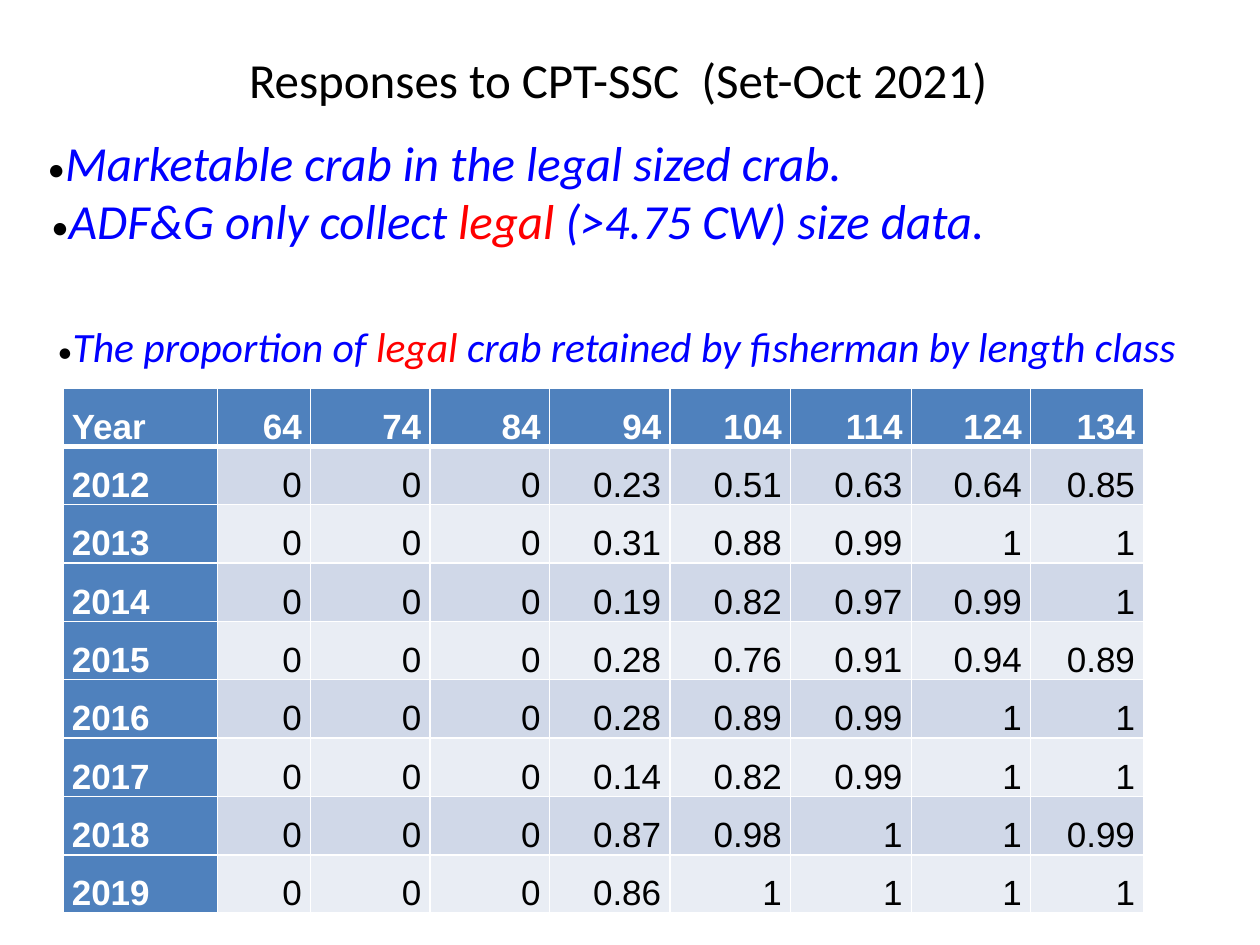
from lxml import etree
from pptx import Presentation
from pptx.dml.color import RGBColor
from pptx.enum.text import MSO_ANCHOR, PP_ALIGN
from pptx.oxml.ns import qn
from pptx.util import Inches, Pt

LEFT, CENTER, RIGHT = PP_ALIGN.LEFT, PP_ALIGN.CENTER, PP_ALIGN.RIGHT
TOP, MIDDLE, BOTTOM = MSO_ANCHOR.TOP, MSO_ANCHOR.MIDDLE, MSO_ANCHOR.BOTTOM

BLACK = RGBColor(0x00, 0x00, 0x00)
WHITE = RGBColor(0xFF, 0xFF, 0xFF)
BLUE = RGBColor(0x00, 0x00, 0xFF)
RED = RGBColor(0xFF, 0x00, 0x00)
HEADER = RGBColor(0x4F, 0x81, 0xBD)
BANDS = (RGBColor(0xD0, 0xD8, 0xE8), RGBColor(0xE9, 0xED, 0xF4))

BULLETS = [
    ((0.28, 1, 9.14, 0.58), 28, 20,
     [("Marketable crab in the legal sized crab.", BLUE)]),
    ((0.31, 1.46, 9.14, 0.58), 28, 20,
     [("ADF&G only collect ", BLUE), ("legal ", RED),
      ("(>4.75 CW) size data.", BLUE)]),
    ((0.36, 2.5, 9.47, 0.58), 23.8, 17,
     [("The proportion of ", BLUE), ("legal", RED),
      (" crab retained by fisherman by length class", BLUE)]),
]
COL_WIDTHS = (1.23, 0.74, 0.95, 0.95, 0.96, 0.96, 0.96, 0.95, 0.9)
ROWS = [
    ("Year", 64, 74, 84, 94, 104, 114, 124, 134),
    (2012, 0, 0, 0, 0.23, 0.51, 0.63, 0.64, 0.85),
    (2013, 0, 0, 0, 0.31, 0.88, 0.99, 1, 1),
    (2014, 0, 0, 0, 0.19, 0.82, 0.97, 0.99, 1),
    (2015, 0, 0, 0, 0.28, 0.76, 0.91, 0.94, 0.89),
    (2016, 0, 0, 0, 0.28, 0.89, 0.99, 1, 1),
    (2017, 0, 0, 0, 0.14, 0.82, 0.99, 1, 1),
    (2018, 0, 0, 0, 0.87, 0.98, 1, 1, 0.99),
    (2019, 0, 0, 0, 0.86, 1, 1, 1, 1),
]


def add_run(p, text, size=28, font="Calibri", color=BLACK, bold=False, italic=False):
    """Append a formatted run to a paragraph."""
    r = p.add_run()
    r.text = text
    r.font.size, r.font.name = Pt(size), font
    r.font.bold, r.font.italic = bold, italic
    r.font.color.rgb = color


def add_box(slide, box, align=LEFT, anchor=TOP, before=0):
    """Add a wrapping text box and return its paragraph."""
    tf = slide.shapes.add_textbox(*map(Inches, box)).text_frame
    tf.word_wrap = True
    tf.vertical_anchor = anchor
    p = tf.paragraphs[0]
    p.alignment, p.space_before = align, Pt(before)
    return p


def add_title(slide, box):
    """Place the centred slide title."""
    p = add_box(slide, box, align=CENTER, anchor=MIDDLE)
    add_run(p, "Responses to CPT-SSC  (Set-Oct 2021)")


def add_bullet(slide, box, size, dot_size, parts):
    """Place one statement with a small black dot before it."""
    p = add_box(slide, box, before=4)
    add_run(p, "•", size=dot_size)
    for text, color in parts:
        add_run(p, text, size=size, color=color, italic=True)


def set_borders(cell, **widths):
    """Give a cell solid white borders of the given widths in points."""
    tc_pr = cell._tc.get_or_add_tcPr()
    for i, (side, width) in enumerate(widths.items()):
        ln = etree.Element(qn(f"a:ln{side}"), w=str(Pt(width)))
        fill = etree.SubElement(ln, qn("a:solidFill"))
        etree.SubElement(fill, qn("a:srgbClr"), val=str(WHITE))
        tc_pr.insert(i, ln)


def add_proportions(slide, box):
    """Place the table of retained proportions by year and length class."""
    frame = slide.shapes.add_table(len(ROWS), len(COL_WIDTHS), *map(Inches, box))
    table = frame.table
    for col, width in zip(table.columns, COL_WIDTHS):
        col.width = Inches(box[2] * width / sum(COL_WIDTHS))
    for i, row in enumerate(ROWS):
        table.rows[i].height = Inches(box[3] / len(ROWS))
        for j, value in enumerate(row):
            cell = table.cell(i, j)
            head = i == 0 or j == 0
            cell.fill.solid()
            cell.fill.fore_color.rgb = HEADER if head else BANDS[(i - 1) % 2]
            cell.vertical_anchor = BOTTOM
            cell.margin_left = cell.margin_right = Inches(0.07)
            cell.margin_top = cell.margin_bottom = 0
            p = cell.text_frame.paragraphs[0]
            p.alignment = RIGHT if j else LEFT
            add_run(p, str(value), size=20, font="Arial",
                    color=WHITE if head else BLACK, bold=head)
            set_borders(cell, L=1, R=1, T=3 if i == 1 else 1, B=3 if i == 0 else 1)


def main():
    """Build and save the slide."""
    prs = Presentation()
    prs.slide_width, prs.slide_height = Inches(10), Inches(7.5)
    slide = prs.slides.add_slide(prs.slide_layouts[6])
    add_title(slide, (0.25, 0.25, 9.31, 0.75))
    add_proportions(slide, (0.5, 3.08, 8.58, 4.17))
    for bullet in BULLETS:
        add_bullet(slide, *bullet)
    prs.save("out.pptx")


if __name__ == "__main__":
    main()
